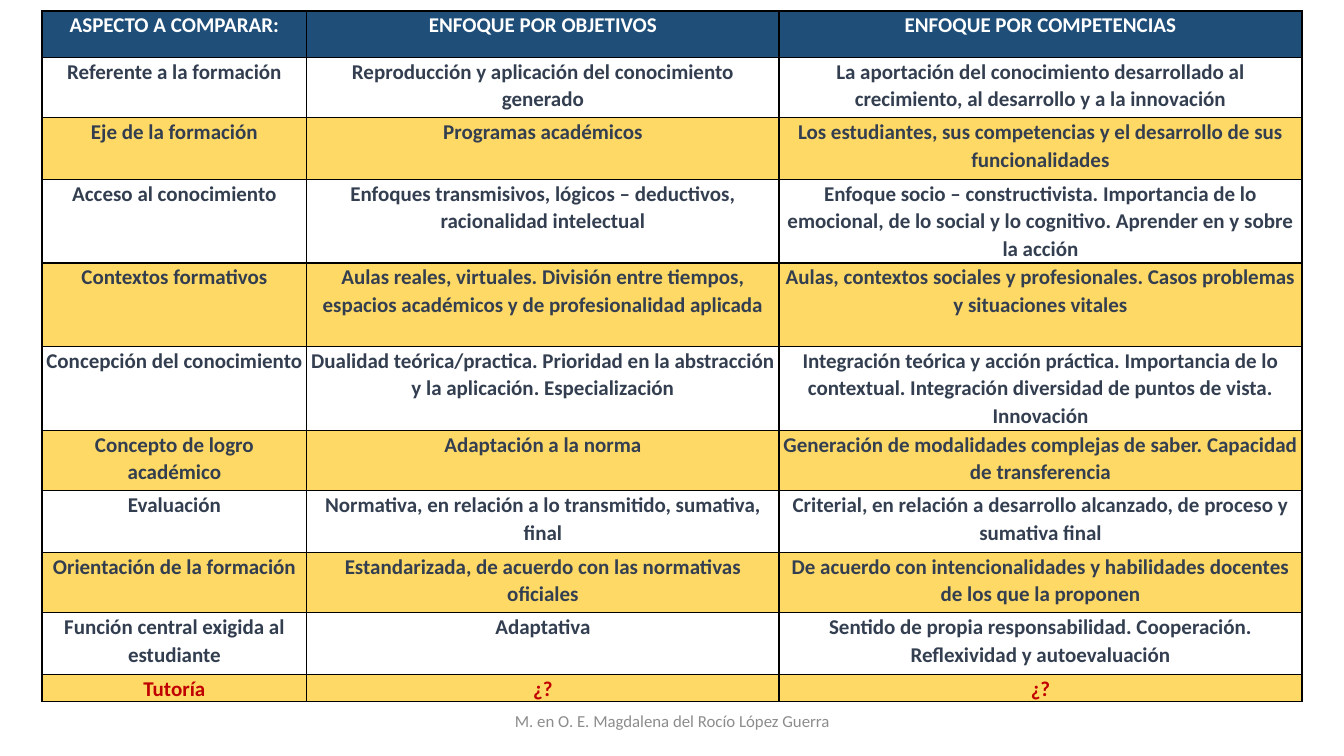
from lxml.etree import SubElement
from pptx import Presentation
from pptx.dml.color import RGBColor
from pptx.enum.text import MSO_ANCHOR, PP_ALIGN
from pptx.oxml.ns import qn
from pptx.util import Pt

PX = 9144  # EMU per px, 100 px to the inch
THEME = {
    "font": "Calibri", "cell": 15, "foot": 12, "spacing": 1.07,
    "head": "1F4E79", "band": "FFD966", "line": "000000",
    "white": "FFFFFF", "aspect": "323E4F", "body": "333F50",
    "last": "C00000", "gray": "8C8C8C", "thick": 1.5, "thin": 1,
}
SLIDE = (1333, 750)
TABLE = (42, 11)
COLS = (262, 469, 518)
FOOT = (442, 695, 450, 40)
AUTHOR = "M. en O. E. Magdalena del Rocío López Guerra"

# Row height in px, then the three cells
ROWS = [
    (46, "ASPECTO A COMPARAR:", "ENFOQUE POR OBJETIVOS", "ENFOQUE POR COMPETENCIAS"),
    (60, "Referente a la formación",
     "Reproducción y aplicación del conocimiento generado",
     "La aportación del conocimiento desarrollado al crecimiento, al desarrollo y a la innovación"),
    (61, "Eje de la formación", "Programas académicos",
     "Los estudiantes, sus competencias y el desarrollo de sus funcionalidades"),
    (83, "Acceso al conocimiento",
     "Enfoques transmisivos, lógicos – deductivos, racionalidad intelectual",
     "Enfoque socio – constructivista. Importancia de lo emocional, de lo social y lo cognitivo. "
     "Aprender en y sobre la acción"),
    (83, "Contextos formativos",
     "Aulas reales, virtuales. División entre tiempos, espacios académicos y de profesionalidad aplicada",
     "Aulas, contextos sociales y profesionales. Casos problemas y situaciones vitales"),
    (83, "Concepción del conocimiento",
     "Dualidad teórica/practica. Prioridad en la abstracción y la aplicación. Especialización",
     "Integración teórica y acción práctica. Importancia de lo contextual. "
     "Integración diversidad de puntos de vista. Innovación"),
    (60, "Concepto de logro académico", "Adaptación a la norma",
     "Generación de modalidades complejas de saber. Capacidad de transferencia"),
    (61, "Evaluación", "Normativa, en relación a lo transmitido, sumativa, final",
     "Criterial, en relación a desarrollo alcanzado, de proceso y sumativa final"),
    (60, "Orientación de la formación",
     "Estandarizada, de acuerdo con las normativas oficiales",
     "De acuerdo con intencionalidades y habilidades docentes de los que la proponen"),
    (61, "Función central exigida al estudiante", "Adaptativa",
     "Sentido de propia responsabilidad. Cooperación. Reflexividad y autoevaluación"),
    (27, "Tutoría", "¿?", "¿?"),
]
LAST = len(ROWS) - 1


def write(frame, text, size, color, bold=False):
    frame.text = text
    para = frame.paragraphs[0]
    para.alignment = PP_ALIGN.CENTER
    font = para.runs[0].font
    font.name, font.size, font.bold = THEME["font"], Pt(size), bold
    font.color.rgb = RGBColor.from_string(color)
    return para


def border(cell, top, bottom):
    """Draw all four cell edges; must run before the fill is set."""
    props = cell._tc.get_or_add_tcPr()
    thick = THEME["thick"]
    for tag, width in (("lnL", thick), ("lnR", thick), ("lnT", top), ("lnB", bottom)):
        line = SubElement(props, qn("a:" + tag), w=str(Pt(width)))
        fill = SubElement(line, qn("a:solidFill"))
        SubElement(fill, qn("a:srgbClr"), val=THEME["line"])


def ink(row, col):
    if row == 0:
        return THEME["white"]
    if row == LAST:
        return THEME["last"]
    return THEME["body" if col else "aspect"]


def paint(cell, row):
    if row and row % 2:
        cell.fill.background()
    else:
        cell.fill.solid()
        cell.fill.fore_color.rgb = RGBColor.from_string(THEME["band" if row else "head"])


def edge(index):
    """Width of the horizontal rule above the row with this index."""
    return THEME["thick" if index in (0, 1, LAST + 1) else "thin"]


def add_grid(slide):
    size = (sum(COLS), sum(row[0] for row in ROWS))
    box = [n * PX for n in TABLE + size]
    grid = slide.shapes.add_table(len(ROWS), len(COLS), *box).table
    grid.first_row = grid.horz_banding = False
    for col, width in enumerate(COLS):
        grid.columns[col].width = width * PX
    for row, (height, *texts) in enumerate(ROWS):
        grid.rows[row].height = height * PX
        for col, text in enumerate(texts):
            cell = grid.cell(row, col)
            cell.margin_left = cell.margin_right = 4 * PX
            cell.margin_top = cell.margin_bottom = 0
            border(cell, edge(row), edge(row + 1))
            paint(cell, row)
            para = write(cell.text_frame, text, THEME["cell"], ink(row, col), True)
            para.line_spacing = THEME["spacing"]


def add_foot(slide):
    frame = slide.shapes.add_textbox(*[n * PX for n in FOOT]).text_frame
    frame.word_wrap = True
    frame.vertical_anchor = MSO_ANCHOR.MIDDLE
    write(frame, AUTHOR, THEME["foot"], THEME["gray"])


def main():
    deck = Presentation()
    deck.slide_width, deck.slide_height = [n * PX for n in SLIDE]
    slide = deck.slides.add_slide(deck.slide_layouts[6])
    add_foot(slide)
    add_grid(slide)
    deck.save("out.pptx")


if __name__ == "__main__":
    main()
